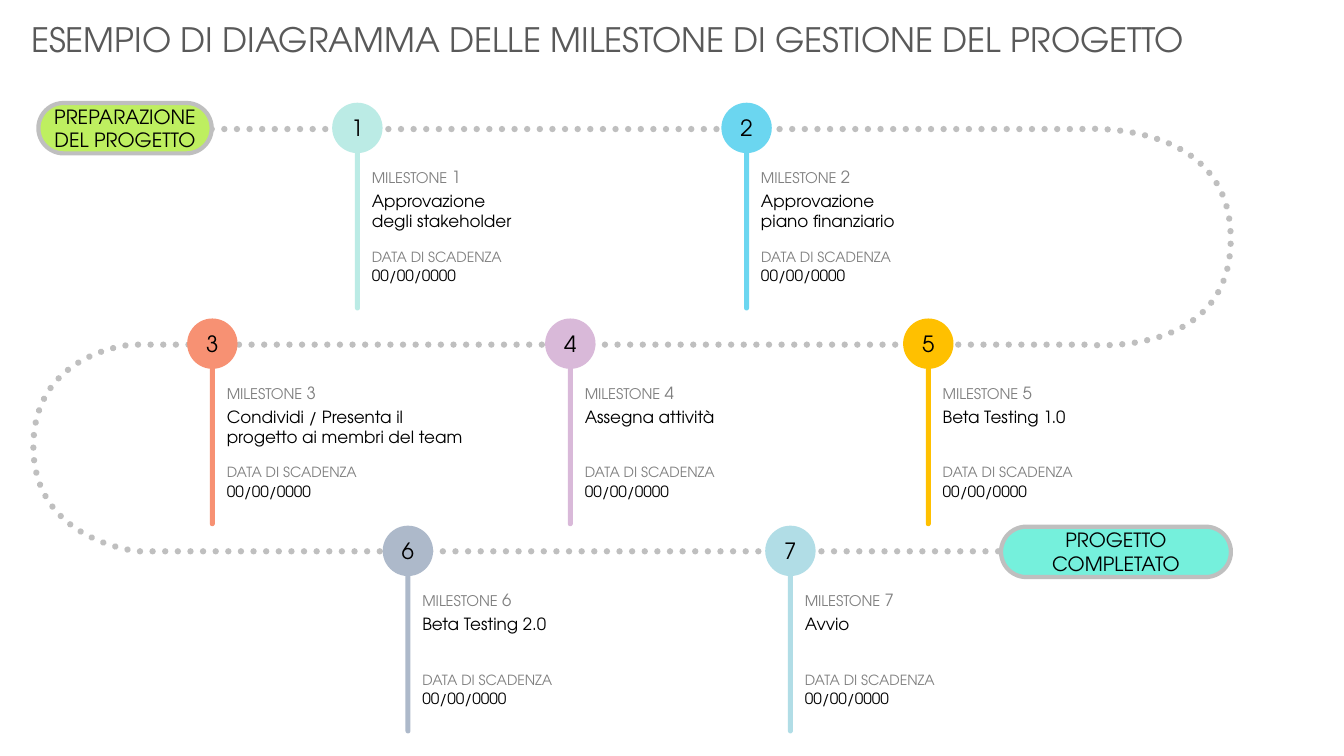
"""Build the project milestone roadmap slide."""
from lxml.etree import SubElement
from pptx import Presentation
from pptx.dml.color import RGBColor
from pptx.enum.dml import MSO_LINE
from pptx.enum.shapes import MSO_SHAPE
from pptx.enum.text import MSO_ANCHOR, MSO_AUTO_SIZE, PP_ALIGN
from pptx.oxml.ns import qn
from pptx.util import Pt

FONT = "TeX Gyre Adventor"
BLACK, GRAY, DARK, TRACK = "000000", "808080", "595959", "BFBFBF"
ROWS = (91.4, 245.5, 393.5)
BADGE = 36
STEM_WIDTH, STEM_HEIGHT = 3.6, 134.6

MILESTONES = (
    (255.3, ROWS[0], "BBEBE5", "Approvazione degli stakeholder", 112.3),
    (533.3, ROWS[0], "6BD6F0", "Approvazione piano finanziario", 98.6),
    (151.7, ROWS[1], "F79173", "Condividi / Presenta il progetto ai membri del team", 170),
    (407.4, ROWS[1], "D9B9D9", "Assegna attività", 98.6),
    (663.1, ROWS[1], "FFC000", "Beta Testing 1.0", 98.6),
    (291.4, ROWS[2], "ADB9CA", "Beta Testing 2.0", 98.6),
    (564.6, ROWS[2], "B1DDE6", "Avvio", 98.6),
)

ROUTE_START = (151.2, 92.2)
ROUTE = (
    ((772.6, 92.2),),
    ((772.6, 92.2), (879.1, 84.2), (879.1, 170.6)),
    ((879.1, 257), (776.2, 246.2), (776.2, 246.2)),
    ((94.3, 246.2),),
    ((94.3, 246.2), (23.8, 251.3), (23.8, 319)),
    ((23.8, 386.6), (98.6, 393.8), (98.6, 393.8)),
    ((740.2, 393.8),),
)


def rgb(value):
    """Turn a hex string into a colour."""
    return RGBColor.from_string(value)


def write(frame, text, size=12, color=BLACK, align=PP_ALIGN.LEFT):
    """Append a formatted run to the first paragraph of a frame."""
    paragraph = frame.paragraphs[0]
    paragraph.alignment = align
    run = paragraph.add_run()
    run.text = text
    run.font.name = FONT
    run.font.size = Pt(size)
    run.font.color.rgb = rgb(color)


def clear_margins(frame):
    """Wrap the text and remove the inner margins of a frame."""
    frame.word_wrap = True
    frame.margin_left = frame.margin_right = 0
    frame.margin_top = frame.margin_bottom = 0


def add_box(shapes, left, top, width, height):
    """Add a wrapping text box without margins and return its frame."""
    frame = shapes.add_textbox(Pt(left), Pt(top), Pt(width), Pt(height)).text_frame
    clear_margins(frame)
    return frame


def add_solid(shapes, kind, left, top, width, height, fill, outline=None):
    """Add a filled preset shape, with an outline if one is given."""
    solid = shapes.add_shape(kind, Pt(left), Pt(top), Pt(width), Pt(height))
    solid.shadow.inherit = False
    solid.fill.solid()
    solid.fill.fore_color.rgb = rgb(fill)
    if kind == MSO_SHAPE.ROUNDED_RECTANGLE:
        solid.adjustments[0] = 0.5
    if outline:
        solid.line.color.rgb = rgb(outline)
        solid.line.width = Pt(3)
    else:
        solid.line.fill.background()
    frame = solid.text_frame
    clear_margins(frame)
    frame.vertical_anchor = MSO_ANCHOR.MIDDLE
    return frame


def add_title(slide, text):
    """Fill and place the title placeholder."""
    title = slide.shapes.title
    title.left, title.top, title.width, title.height = Pt(15), Pt(10), Pt(855.4), Pt(36.4)
    frame = title.text_frame
    frame.word_wrap = True
    frame.auto_size = MSO_AUTO_SIZE.NONE
    frame.vertical_anchor = MSO_ANCHOR.TOP
    write(frame, text, size=24, color=DARK)


def bend_legs(route):
    """Turn the legs that have control points into cubic curves."""
    segments = list(route.element.iter(qn("a:lnTo")))
    for segment, leg in zip(segments, ROUTE):
        if len(leg) == 3:
            segment.tag = qn("a:cubicBezTo")
            segment.remove(segment[0])
            for x, y in leg:
                SubElement(segment, qn("a:pt"), x=str(Pt(x) - route.left),
                           y=str(Pt(y) - route.top))


def add_route(shapes):
    """Draw the dotted winding route through the three rows."""
    builder = shapes.build_freeform(*map(Pt, ROUTE_START))
    builder.add_line_segments([(Pt(x), Pt(y)) for *_, (x, y) in ROUTE], close=False)
    route = builder.convert_to_shape()
    bend_legs(route)
    route.shadow.inherit = False
    route.fill.background()
    route.line.color.rgb = rgb(TRACK)
    route.line.width = Pt(4.5)
    route.line.dash_style = MSO_LINE.ROUND_DOT
    route.element.spPr.find(qn("a:ln")).set("cap", "rnd")


def add_terminal(shapes, left, top, width, text, fill):
    """Add the pill at one end of the route."""
    frame = add_solid(shapes, MSO_SHAPE.ROUNDED_RECTANGLE, left, top, width, BADGE,
                      fill, outline=TRACK)
    write(frame, text, size=14, align=PP_ALIGN.CENTER)


def add_milestone(slide, number, center, axis, color, task, task_width):
    """Add a grouped stem, numbered badge and milestone details."""
    shapes = slide.shapes.add_group_shape().shapes
    add_solid(shapes, MSO_SHAPE.ROUNDED_RECTANGLE, center - STEM_WIDTH / 2, axis - 4.2,
              STEM_WIDTH, STEM_HEIGHT, color)
    left = center + 10.3
    label = add_box(shapes, left, axis + 28, 84.2, 18.7)
    write(label, "MILESTONE", size=10.5, color=GRAY)
    write(label, " ", size=11, color=GRAY)
    write(label, str(number), color=GRAY)
    write(add_box(shapes, left, axis + 45, task_width, 41), task)
    write(add_box(shapes, left, axis + 85.9, 120, 13), "DATA DI SCADENZA",
          size=10, color=GRAY)
    write(add_box(shapes, left, axis + 98.9, 64.8, 18.7), "00/00/0000", size=11)
    badge = add_solid(shapes, MSO_SHAPE.OVAL, center - BADGE / 2, axis - BADGE / 2,
                      BADGE, BADGE, color)
    write(badge, str(number), size=16, align=PP_ALIGN.CENTER)


def main():
    """Build and save the slide."""
    deck = Presentation()
    deck.slide_width, deck.slide_height = Pt(960), Pt(540)
    slide = deck.slides.add_slide(deck.slide_layouts[5])
    add_title(slide, "ESEMPIO DI DIAGRAMMA DELLE MILESTONE DI GESTIONE DEL PROGETTO")
    add_route(slide.shapes)
    add_terminal(slide.shapes, 27.4, 73.6, 123.8, "PREPARAZIONE DEL PROGETTO", "BEEF60")
    for number, milestone in enumerate(MILESTONES, 1):
        add_milestone(slide, number, *milestone)
    add_terminal(slide.shapes, 715, 376.2, 164.2, "PROGETTO COMPLETATO", "75F0DC")
    deck.save("out.pptx")


if __name__ == "__main__":
    main()
